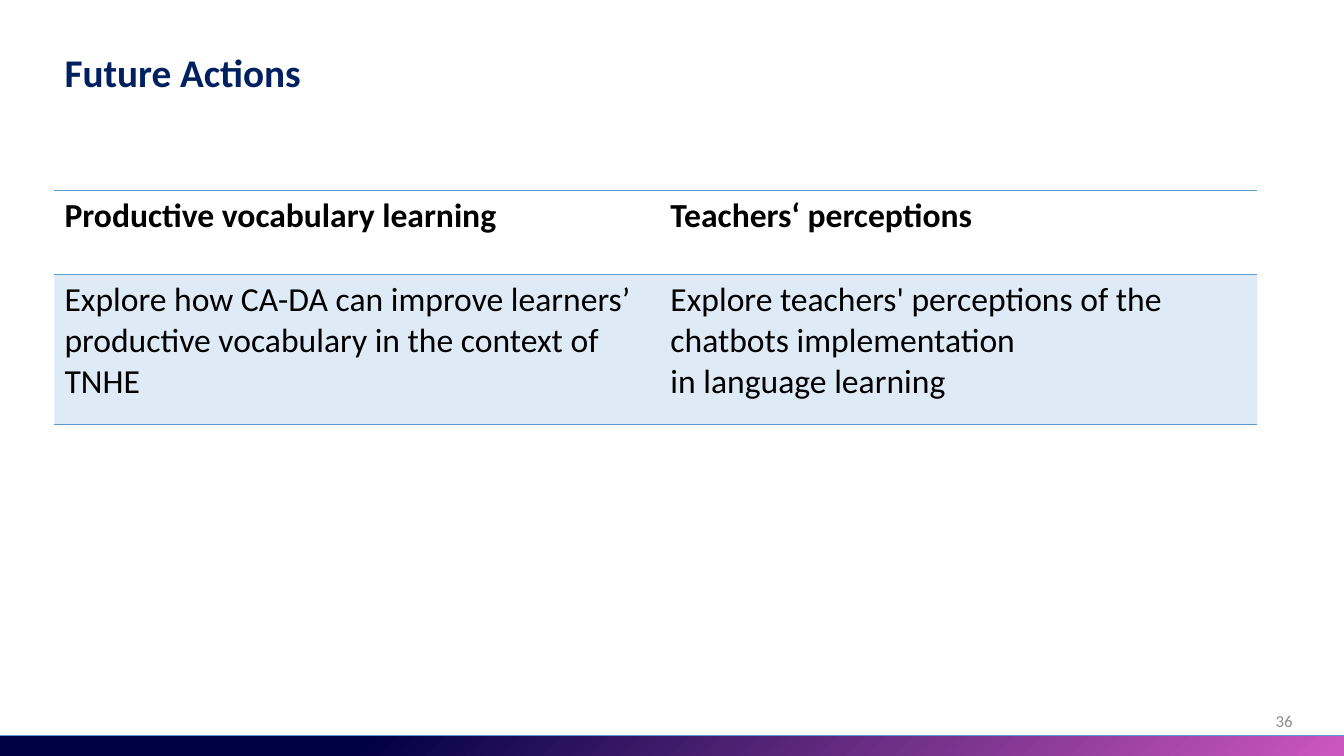
from pptx import Presentation
from pptx.dml.color import RGBColor
from pptx.enum.shapes import MSO_SHAPE
from pptx.enum.text import MSO_ANCHOR, PP_ALIGN
from pptx.oxml import parse_xml
from pptx.oxml.ns import nsdecls, qn
from pptx.util import Inches, Pt

RECT = MSO_SHAPE.RECTANGLE
TOP, MIDDLE = MSO_ANCHOR.TOP, MSO_ANCHOR.MIDDLE
LEFT, RIGHT = PP_ALIGN.LEFT, PP_ALIGN.RIGHT

NAVY = RGBColor(0x00, 0x20, 0x60)
NIGHT = RGBColor(0x00, 0x00, 0x44)
PINK = RGBColor(0xCE, 0x57, 0xC1)
BLUE = RGBColor(0x5B, 0x9B, 0xD5)
GREY = RGBColor(0x8C, 0x8C, 0x8C)
BLACK = RGBColor(0x00, 0x00, 0x00)

PLAIN = "{2D5ABB26-0587-4C30-8999-92F81FD0307C}"  # table style without grid
WIDTHS = (6.01, 5.92)
HEIGHTS = (0.83, 1.49)
ROWS = (
    ("Productive vocabulary learning", "Teachers‘ perceptions"),
    ("Explore how CA-DA can improve learners’ productive vocabulary "
     "in the context of TNHE",
     "Explore teachers' perceptions of the chatbots implementation\n"
     "in language learning"),
)


def write(frame, text, size, color, bold=False, align=LEFT):
    para = frame.paragraphs[0]
    para.text = text
    para.alignment = align
    style = {"name": "Calibri", "size": Pt(size), "bold": bold}
    for run in para.runs:
        for key, value in style.items():
            setattr(run.font, key, value)
        run.font.color.rgb = color
    return para


def add_bar(slide):
    bar = slide.shapes.add_shape(RECT, Inches(-0.06), Inches(7.3),
                                 Inches(13.39), Inches(0.31))
    bar.shadow.inherit = False
    bar.fill.gradient()
    bar.fill.gradient_angle = 315
    stops = ((0.27, NIGHT), (1, PINK))
    for stop, (place, color) in zip(bar.fill.gradient_stops, stops):
        stop.position = place
        stop.color.rgb = color
    bar.line.color.rgb = BLUE
    bar.line.width = Pt(0.5)


def add_title(slide, text):
    title = slide.shapes.title
    title.left, title.top = Inches(0.54), Inches(0.48)
    title.width, title.height = Inches(8.8), Inches(0.89)
    title.text_frame.vertical_anchor = TOP
    para = write(title.text_frame, text, 28, NAVY, bold=True)
    para.line_spacing = 0.9


def add_number(slide, text):
    box = slide.shapes.add_textbox(Inches(9.92), Inches(6.95),
                                   Inches(3), Inches(0.4))
    box.text_frame.word_wrap = True
    box.text_frame.vertical_anchor = MIDDLE
    write(box.text_frame, text, 12, GREY, align=RIGHT)


def tint(cell):
    """Fill a cell with blue at 20 % opacity."""
    cell.fill.solid()
    cell.fill.fore_color.rgb = BLUE
    color = cell._tc.tcPr.find(".//" + qn("a:srgbClr"))
    color.append(parse_xml(f'<a:alpha {nsdecls("a")} val="20000"/>'))


def rule(cell, sides):
    """Draw blue borders, which must come before the fill in the XML."""
    props = cell._tc.get_or_add_tcPr()
    for spot, side in enumerate(sides):
        props.insert(spot, parse_xml(
            f'<a:ln{side} {nsdecls("a")} w="{Pt(1)}"><a:solidFill>'
            f'<a:srgbClr val="{BLUE}"/></a:solidFill></a:ln{side}>'))


def add_grid(slide):
    frame = slide.shapes.add_table(
        len(ROWS), len(WIDTHS), Inches(0.54), Inches(1.89),
        Inches(sum(WIDTHS)), Inches(sum(HEIGHTS)))
    table = frame.table
    table.horz_banding = False
    table._tbl.tblPr.find(qn("a:tableStyleId")).text = PLAIN
    for column, width in zip(table.columns, WIDTHS):
        column.width = Inches(width)
    for row, height, texts in zip(table.rows, HEIGHTS, ROWS):
        row.height = Inches(height)
        head = texts is ROWS[0]
        for cell, text in zip(row.cells, texts):
            write(cell.text_frame, text, 24, BLACK, bold=head)
            if head:
                cell.fill.background()
            else:
                tint(cell)
            rule(cell, "TB")


def main():
    deck = Presentation()
    deck.slide_width, deck.slide_height = Inches(13.33), Inches(7.5)
    slide = deck.slides.add_slide(deck.slide_layouts[5])
    add_bar(slide)
    add_number(slide, "36")
    add_title(slide, "Future Actions")
    add_grid(slide)
    deck.save("out.pptx")


if __name__ == "__main__":
    main()
